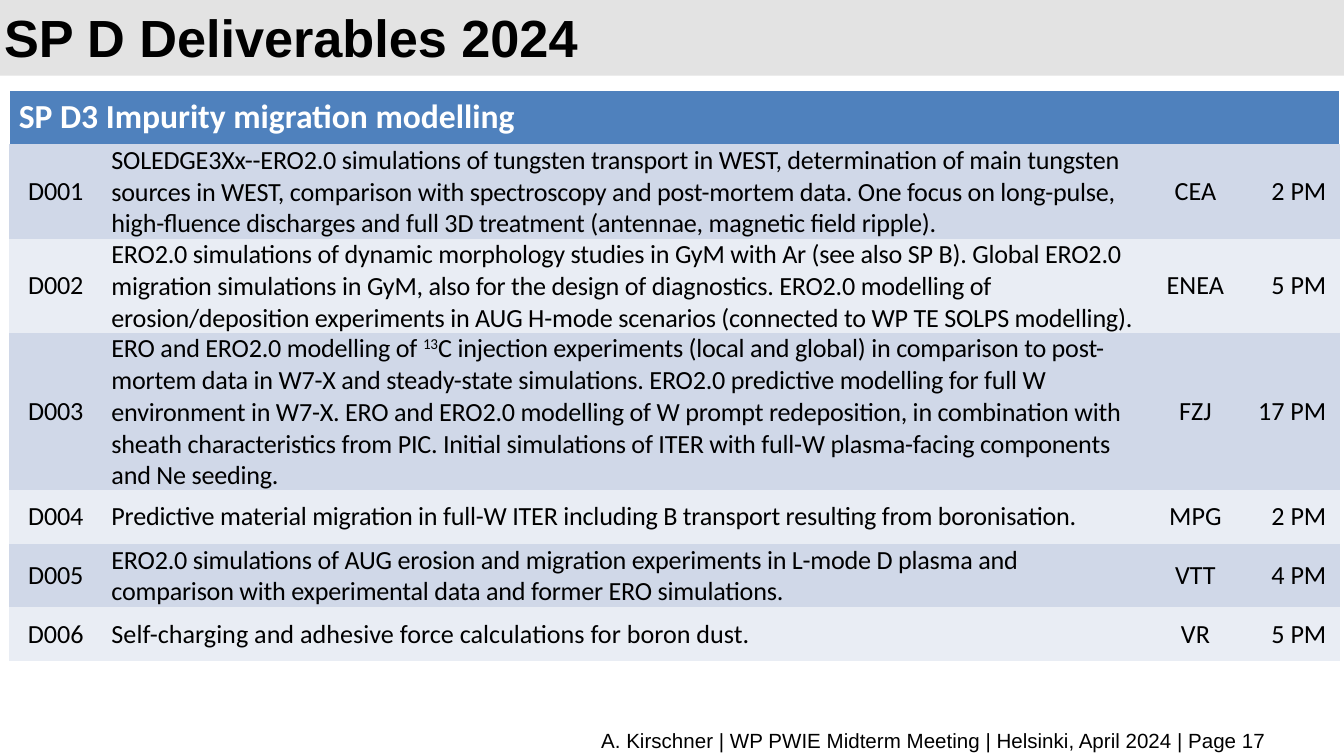
from lxml.etree import SubElement as Sub
from pptx import Presentation
from pptx.dml.color import RGBColor as RGB
from pptx.enum.shapes import MSO_SHAPE as Geo
from pptx.enum.text import MSO_ANCHOR as Anchor, PP_ALIGN as Align
from pptx.oxml.ns import qn
from pptx.util import Inches as In, Pt

HEX = {"band": "E3E3E3", "head": "4F81BD", "odd": "D0D8E8",
       "even": "E9EDF4", "ink": "000000", "white": "FFFFFF"}


def add_run(para, text, size, face, ink="ink", bold=False):
    run = para.add_run()
    run.text = text
    font = run.font
    font.size, font.name, font.bold = Pt(size), face, bold
    font.color.rgb = RGB.from_string(HEX[ink])
    return run


def paint(part, name):
    part.fill.solid()
    part.fill.fore_color.rgb = RGB.from_string(HEX[name])


# Slide in 16:9
deck = Presentation()
wide = In(10)
high = wide * 9 // 16
deck.slide_width, deck.slide_height = wide, high
slide = deck.slides.add_slide(deck.slide_layouts[5])
title = slide.shapes.title

# Grey band, kept behind the title
band = slide.shapes.add_shape(Geo.RECTANGLE, 0, 0, wide, high // 10)
band.shadow.inherit = False
paint(band, "band")
band.line.fill.background()
title._element.addprevious(band._element)

# Title
title.left, title.top = In(-0.07), In(0.09)
title.width, title.height = In(8.25), In(0.38)
title.text_frame.vertical_anchor = Anchor.MIDDLE
para = title.text_frame.paragraphs[0]
para.alignment, para.line_spacing = Align.LEFT, Pt(32)
add_run(para, "SP D Deliverables 2024", 28, "Arial", bold=True)

# Footer
foot = slide.shapes.add_textbox(In(0.51), In(5.37), In(9.01), In(0.22))
foot.text_frame.word_wrap = True
para = foot.text_frame.paragraphs[0]
para.alignment = Align.RIGHT
add_run(para, "A. Kirschner | WP PWIE Midterm Meeting | Helsinki, April 2024 | Page 17",
        11, "Arial")

# Deliverables: text parts (every second one is raised), partner, effort
tasks = [
    (["SOLEDGE3Xx--ERO2.0 simulations of tungsten transport in WEST, determination of "
      "main tungsten sources in WEST, comparison with spectroscopy and post-mortem data. "
      "One focus on long-pulse, high-fluence discharges and full 3D treatment (antennae, "
      "magnetic field ripple)."], "CEA", 2),
    (["ERO2.0 simulations of dynamic morphology studies in GyM with Ar (see also SP B). "
      "Global ERO2.0 migration simulations in GyM, also for the design of diagnostics. "
      "ERO2.0 modelling of erosion/deposition experiments in AUG H-mode scenarios "
      "(connected to WP TE SOLPS modelling)."], "ENEA", 5),
    (["ERO and ERO2.0 modelling of ", "13",
      "C injection experiments (local and global) in comparison to post-mortem data in "
      "W7-X and steady-state simulations. ERO2.0 predictive modelling for full W "
      "environment in W7-X. ERO and ERO2.0 modelling of W prompt redeposition, in "
      "combination with sheath characteristics from PIC. Initial simulations of ITER "
      "with full-W plasma-facing components and Ne seeding."], "FZJ", 17),
    (["Predictive material migration in full-W ITER including B transport resulting "
      "from boronisation."], "MPG", 2),
    (["ERO2.0 simulations of AUG erosion and migration experiments in L-mode D plasma "
      "and comparison with experimental data and former ERO simulations."], "VTT", 4),
    (["Self-charging and adhesive force calculations for boron dust."], "VR", 5),
]

# Table grid: equal least heights, rows grow with their text
cols = [0.69, 7.78, 0.71, 0.72]
frame = slide.shapes.add_table(len(tasks) + 1, len(cols), In(0.07), In(0.67),
                               In(sum(cols)), In(4.25))
table = frame.table
table._tbl.tblPr.find(qn("a:tableStyleId")).text = "{2D5ABB26-0587-4C30-8999-92F81FD0307C}"
for col, size in zip(table.columns, cols):
    col.width = In(size)
for row in table.rows:
    row.height = high * 72 // 1000
frame.height = In(4.25)

# Header row with white edges
head = table.cell(0, 0)
head.merge(table.cell(0, 3))
head.margin_left = head.margin_right = In(0.07)
head.margin_top = head.margin_bottom = 0
for side in ("lnL", "lnR", "lnT"):
    edge = Sub(head._tc.get_or_add_tcPr(), qn("a:" + side), w=str(Pt(1)))
    Sub(Sub(edge, qn("a:solidFill")), qn("a:srgbClr"), val=HEX["white"])
paint(head, "head")
para = head.text_frame.paragraphs[0]
para.line_spacing = 1.15
add_run(para, "SP D3 Impurity migration modelling", 18, "Calibri", "white", True)

# Body rows
aligns = [Align.CENTER, Align.LEFT, Align.CENTER, Align.RIGHT]
for r, (parts, team, months) in enumerate(tasks, 1):
    texts = [[f"D{r:03}"], parts, [team], [f"{months} PM"]]
    for c, (text, align) in enumerate(zip(texts, aligns)):
        cell = table.cell(r, c)
        cell.vertical_anchor = Anchor.MIDDLE
        paint(cell, "odd" if r % 2 else "even")
        if c < 2:
            cell.margin_left = cell.margin_right = In(0.07)
            cell.margin_top = cell.margin_bottom = 0
        para = cell.text_frame.paragraphs[0]
        para.alignment = align
        for i, part in enumerate(text):
            props = add_run(para, part, 14, "Calibri").font._element
            if c < 2 and r < len(tasks):
                props.set("spc", "-15")
            if i % 2:
                props.set("baseline", "30000")

deck.save("out.pptx")
